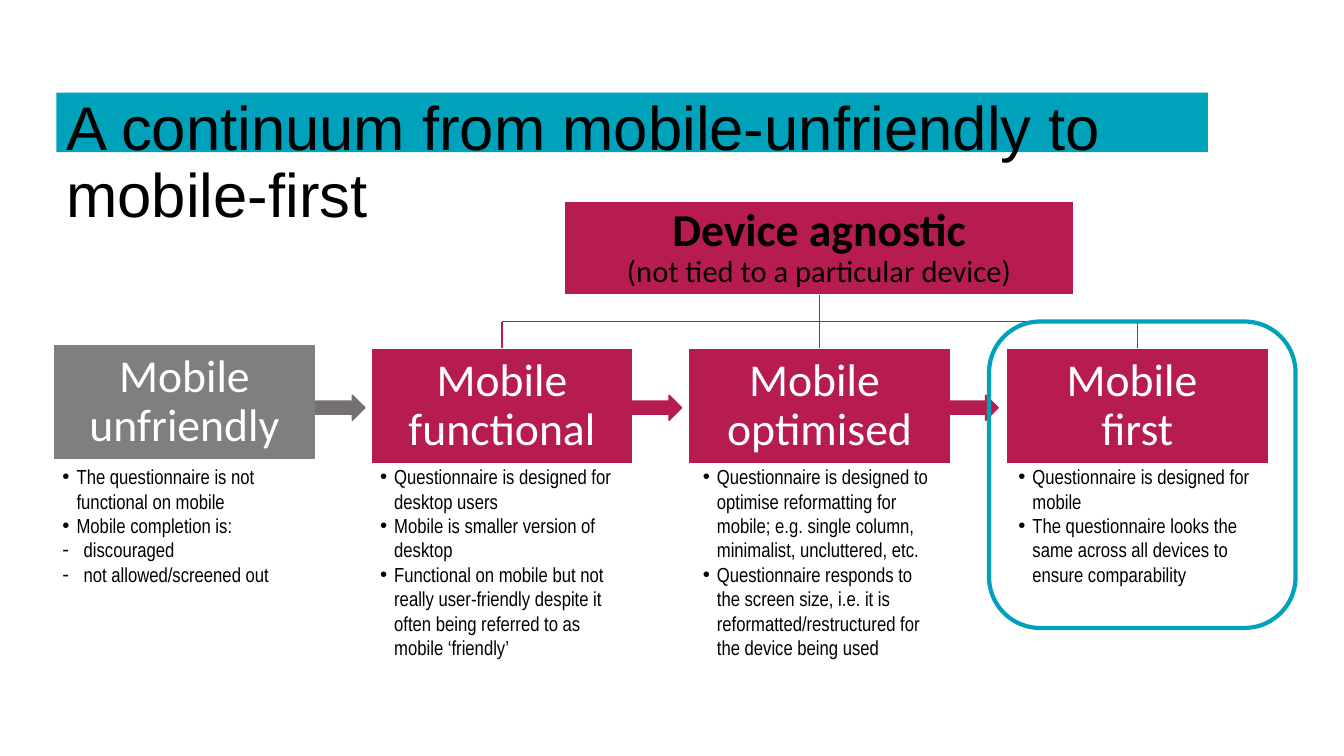
"""Build a slide showing the continuum from mobile-unfriendly to mobile-first."""
from lxml.etree import SubElement
from pptx import Presentation
from pptx.dml.color import RGBColor
from pptx.enum.shapes import MSO_CONNECTOR, MSO_SHAPE
from pptx.enum.text import MSO_ANCHOR, PP_ALIGN
from pptx.oxml.ns import qn
from pptx.util import Inches, Pt

COLORS = {"teal": "00A1BA", "crimson": "B61D4E", "grey": "7F7F7F",
          "taupe": "767171", "white": "FFFFFF", "black": "000000"}
LEFT, PITCH, CARD_W, CARD_H = 0.53, 3.15, 2.6, 1.14
ROWS = {"title": 0.92, "root": 2, "trunk": 2.91, "rail": 3.19,
        "card": 3.46, "arrow": 3.92, "notes": 4.56}

STAGES = [
    (["Mobile unfriendly"], "grey", -0.04, 0, 2.6, [
        ("•", "The questionnaire is not functional on mobile"),
        ("•", "Mobile completion is:"),
        ("-", "discouraged"),
        ("-", "not allowed/screened out")]),
    (["Mobile functional"], "crimson", 0, 0, 2.6, [
        ("•", "Questionnaire is designed for desktop users"),
        ("•", "Mobile is smaller version of desktop"),
        ("•", "Functional on mobile but not really user-friendly despite it "
              "often being referred to as mobile ‘friendly’")]),
    (["Mobile ", "optimised"], "crimson", 0, 0.05, 2.52, [
        ("•", "Questionnaire is designed to optimise reformatting for mobile; "
              "e.g. single column, minimalist, uncluttered, etc."),
        ("•", "Questionnaire responds to the screen size, i.e. it is "
              "reformatted/restructured for the device being used")]),
    (["Mobile ", "first"], "crimson", 0, 0.03, 2.56, [
        ("•", "Questionnaire is designed for mobile"),
        ("•", "The questionnaire looks the same across all devices to ensure "
              "comparability")]),
]


def rgb(name):
    """Return the named colour."""
    return RGBColor.from_string(COLORS[name])


def col(i):
    """Return the left edge of a column in inches."""
    return LEFT + PITCH * i


def add_box(s, kind, x, y, w, h, fill=None, line=None, width=1):
    """Add a preset shape without shadow."""
    sp = s.shapes.add_shape(kind, *map(Inches, (x, y, w, h)))
    sp.shadow.inherit = False
    if fill:
        sp.fill.solid()
        sp.fill.fore_color.rgb = rgb(fill)
    else:
        sp.fill.background()
    if line:
        sp.line.color.rgb = rgb(line)
        sp.line.width = Pt(width)
    else:
        sp.line.fill.background()
    return sp


def set_frame(sp, inset_x, inset_y, anchor):
    """Prepare a wrapping text frame."""
    tf = sp.text_frame
    tf.word_wrap = True
    tf.margin_left = tf.margin_right = Inches(inset_x)
    tf.margin_top = tf.margin_bottom = Inches(inset_y)
    tf.vertical_anchor = anchor
    return tf


def add_para(tf, first, text, size, font, color, bold=False):
    """Add a paragraph holding one run."""
    p = tf.paragraphs[0] if first else tf.add_paragraph()
    r = p.add_run()
    r.text = text
    r.font.size = Pt(size)
    r.font.name = font
    r.font.bold = bold
    r.font.color.rgb = rgb(color)
    return p


def add_card(s, x, y, w, h, fill, lines, color):
    """Add a filled card with centred lines of (text, size, bold)."""
    sp = add_box(s, MSO_SHAPE.RECTANGLE, x, y, w, h, fill, "white")
    tf = set_frame(sp, 0.02, 0.02, MSO_ANCHOR.MIDDLE)
    for i, (text, size, bold) in enumerate(lines):
        p = add_para(tf, i == 0, text, size, "Calibri", color, bold)
        p.alignment = PP_ALIGN.CENTER
        p.line_spacing = 0.9


def add_notes(s, x, w, items):
    """Add a bulleted text box under a card."""
    sp = s.shapes.add_textbox(*map(Inches, (x, ROWS["notes"], w, 2.04)))
    tf = set_frame(sp, 0.09, 0.05, MSO_ANCHOR.TOP)
    for i, (mark, text) in enumerate(items):
        p = add_para(tf, i == 0, text, 14.5, "Arial Narrow", "black")
        indent = Inches(0.21 if mark == "-" else 0.14)
        pPr = p._p.get_or_add_pPr()
        pPr.set("marL", str(indent))
        pPr.set("indent", str(-indent))
        SubElement(pPr, qn("a:buFont"), typeface="Arial")
        SubElement(pPr, qn("a:buChar"), char=mark)


def add_line(s, x1, y1, x2, y2):
    """Add a straight connector of the tree."""
    cx = s.shapes.add_connector(MSO_CONNECTOR.STRAIGHT,
                                *map(Inches, (x1, y1, x2, y2)))
    cx.line.color.rgb = rgb("crimson")
    cx.line.width = Pt(1)
    SubElement(cx._element.spPr, qn("a:effectLst"))


def add_tree(s):
    """Add the root card and its branches to the last three columns."""
    centers = [col(i) + CARD_W / 2 for i in (1, 2, 3)]
    add_line(s, centers[1], ROWS["trunk"], centers[1], ROWS["rail"])
    add_line(s, centers[0], ROWS["rail"], centers[2], ROWS["rail"])
    for x in centers:
        add_line(s, x, ROWS["rail"], x, ROWS["card"])
    add_card(s, centers[1] - 2.53, ROWS["root"], 5.05, 0.92, "crimson",
             [("Device agnostic", 32.6, True),
              ("(not tied to a particular device)", 21.8, False)], "black")


def add_title(s, text):
    """Add the title on its teal band."""
    sp = add_box(s, MSO_SHAPE.RECTANGLE, 0.56, ROWS["title"], 11.42, 0.59, "teal")
    tf = set_frame(sp, 0.1, 0.05, MSO_ANCHOR.TOP)
    p = add_para(tf, True, text, 44, "Arial", "black")
    p.alignment = PP_ALIGN.LEFT
    p.line_spacing = 0.9


def add_arrow(s, i, color):
    """Add the arrow that follows column i."""
    sp = add_box(s, MSO_SHAPE.RIGHT_ARROW, 3.13 + 3.14 * i, ROWS["arrow"],
                 0.49, 0.25, color, color)
    sp.adjustments[0] = 0.52


def main():
    """Build and save the slide."""
    prs = Presentation()
    prs.slide_width, prs.slide_height = Inches(13.33), Inches(7.5)
    s = prs.slides.add_slide(prs.slide_layouts[6])
    add_title(s, "A continuum from mobile-unfriendly to mobile-first")
    add_tree(s)
    for i, (lines, fill, dy, dx, w, items) in enumerate(STAGES):
        add_card(s, col(i), ROWS["card"] + dy, CARD_W, CARD_H, fill,
                 [(text, 32.6, False) for text in lines], "white")
        add_notes(s, col(i) + dx, w, items)
    for i, color in enumerate(("taupe", "crimson", "crimson")):
        add_arrow(s, i, color)
    add_box(s, MSO_SHAPE.ROUNDED_RECTANGLE, 9.81, ROWS["rail"], 3.04, 3.04,
            line="teal", width=3)
    prs.save("out.pptx")


if __name__ == "__main__":
    main()
